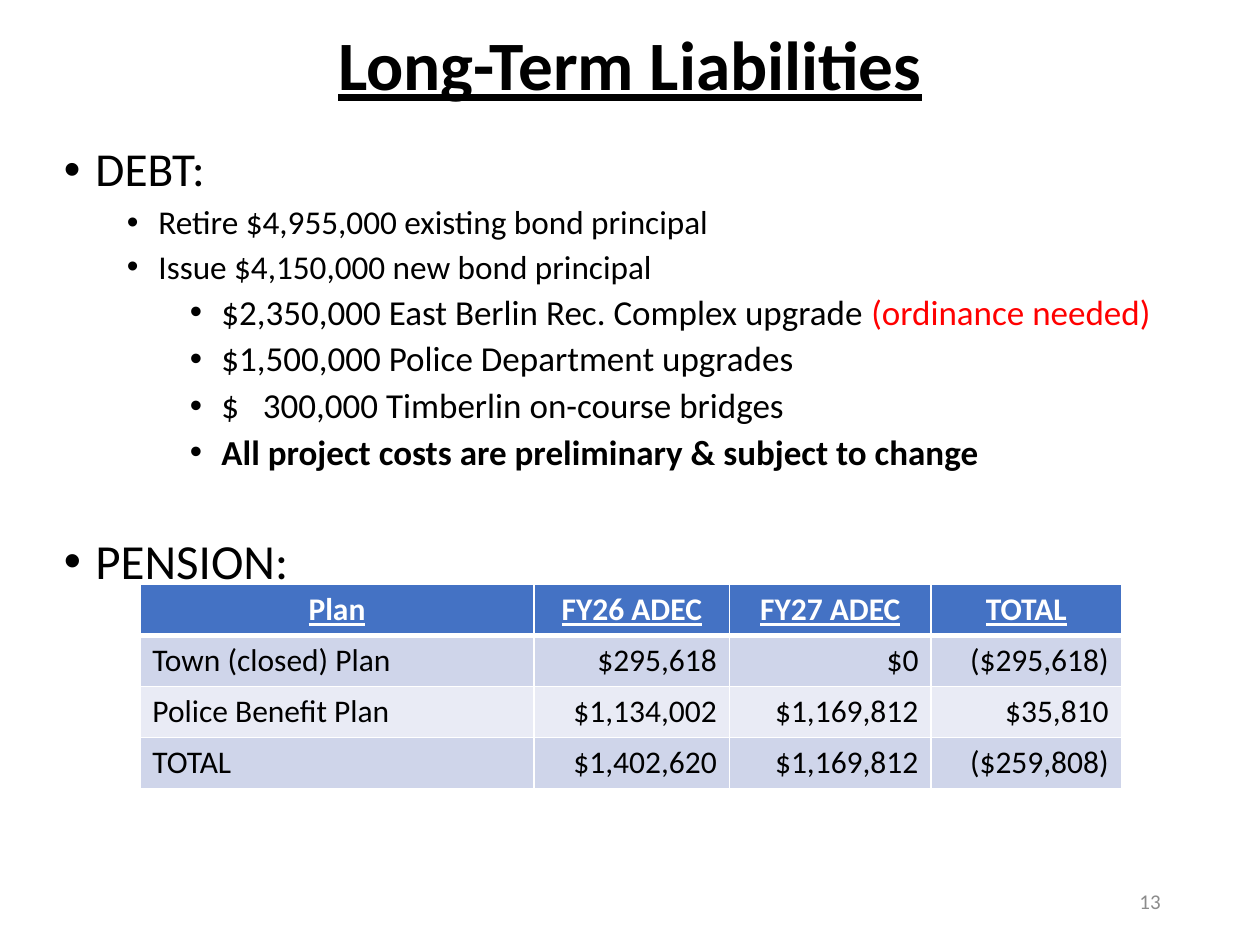
"""Build the Long-Term Liabilities slide with debt bullets and a pension table."""
from lxml import etree
from pptx import Presentation
from pptx.dml.color import RGBColor
from pptx.enum.text import MSO_ANCHOR, PP_ALIGN
from pptx.oxml.ns import qn
from pptx.util import Inches, Pt

LEFT, CENTER, RIGHT = PP_ALIGN.LEFT, PP_ALIGN.CENTER, PP_ALIGN.RIGHT
TOP, MIDDLE = MSO_ANCHOR.TOP, MSO_ANCHOR.MIDDLE
BLACK, WHITE, RED, GRAY = "000000", "FFFFFF", "FF0000", "8C8C8C"
HEADER, BAND_DARK, BAND_LIGHT = "4472C4", "CFD5EA", "E9EBF5"


def add_text(p, text, size, color=BLACK, bold=False, underline=False, align=LEFT, spacing=0):
    p.alignment = align
    r = p.add_run()
    r.text = text
    r.font.name = "Calibri"
    r.font.size = Pt(size)
    r.font.bold = bold
    r.font.underline = underline
    r.font.color.rgb = RGBColor.from_string(color)
    if spacing:
        r.font._element.set("spc", str(spacing * 100))


def add_box(left, top, width, height, anchor):
    tf = s.shapes.add_textbox(Inches(left), Inches(top), Inches(width), Inches(height)).text_frame
    tf.word_wrap = True
    tf.vertical_anchor = anchor
    return tf


prs = Presentation()
prs.slide_width, prs.slide_height = Inches(10), Inches(7.5)
s = prs.slides.add_slide(prs.slide_layouts[6])

p = add_box(0.69, 0.28, 8.62, 0.52, MIDDLE).paragraphs[0]
p.line_spacing = 0.9
add_text(p, "Long-Term Liabilities", 39.6, bold=True, underline=True, align=CENTER)

bullets = [
    (0, 0, 27, [("DEBT:", {})]),
    (1, 5, 19, [("Retire $4,955,000 existing bond principal", {})]),
    (1, 5, 19, [("Issue $4,150,000 new bond principal", {})]),
    (2, 5, 20, [("$2,350,000 East Berlin Rec. Complex upgrade", {}),
                (" (ordinance needed)", {"color": RED})]),
    (2, 5, 20, [("$1,500,000 Police Department upgrades", {})]),
    (2, 5, 20, [("$", {}), (" ", {"spacing": 9}), ("300,000 Timberlin on-course bridges", {})]),
    (2, 5, 20, [("All project costs are preliminary & subject to change", {"bold": True})]),
    (0, 37, 28, [("PENSION:", {})]),
]
tf = add_box(0.41, 1.11, 9.17, 5.71, TOP)
for i, (level, before, size, runs) in enumerate(bullets):
    p = tf.paragraphs[0] if i == 0 else tf.add_paragraph()
    p.level = level
    p.line_spacing = 0.9
    p.space_before = Pt(before)
    pPr = p._p.get_or_add_pPr()
    pPr.set("marL", str(Inches(0.25 + 0.5 * level)))
    pPr.set("indent", str(-Inches(0.25)))
    etree.SubElement(pPr, qn("a:buFont")).set("typeface", "Arial")
    etree.SubElement(pPr, qn("a:buChar")).set("char", "•")
    for text, fmt in runs:
        add_text(p, text, size, **fmt)

p = add_box(7.06, 6.95, 2.25, 0.4, MIDDLE).paragraphs[0]
add_text(p, "13", 12, color=GRAY, align=RIGHT)

rows = [
    ("Plan", "FY26 ADEC", "FY27 ADEC", "TOTAL"),
    ("Town (closed) Plan", "$295,618", "$0", "($295,618)"),
    ("Police Benefit Plan", "$1,134,002", "$1,169,812", "$35,810"),
    ("TOTAL", "$1,402,620", "$1,169,812", "($259,808)"),
]
widths = [3.13, 1.55, 1.6, 1.51]
row_height = 0.405
table = s.shapes.add_table(len(rows), len(widths), Inches(1.11), Inches(4.64),
                           Inches(sum(widths)), Inches(row_height * len(rows))).table
for column, width in zip(table.columns, widths):
    column.width = Inches(width)
for i, row in enumerate(rows):
    table.rows[i].height = Inches(row_height)
    for j, text in enumerate(row):
        cell = table.cell(i, j)
        tcPr = cell._tc.get_or_add_tcPr()
        for side in "LRTB":
            thick = (i, side) in ((0, "B"), (1, "T"))
            ln = etree.SubElement(tcPr, qn(f"a:ln{side}"), w=str(Pt(3 if thick else 1)))
            fill = etree.SubElement(ln, qn("a:solidFill"))
            etree.SubElement(fill, qn("a:srgbClr"), val=WHITE)
        cell.fill.solid()
        band = HEADER if i == 0 else BAND_DARK if i % 2 else BAND_LIGHT
        cell.fill.fore_color.rgb = RGBColor.from_string(band)
        p = cell.text_frame.paragraphs[0]
        if i == 0:
            add_text(p, text, 18, color=WHITE, bold=True, underline=True, align=CENTER)
        else:
            add_text(p, text, 18, align=RIGHT if j else LEFT)

prs.save("out.pptx")
